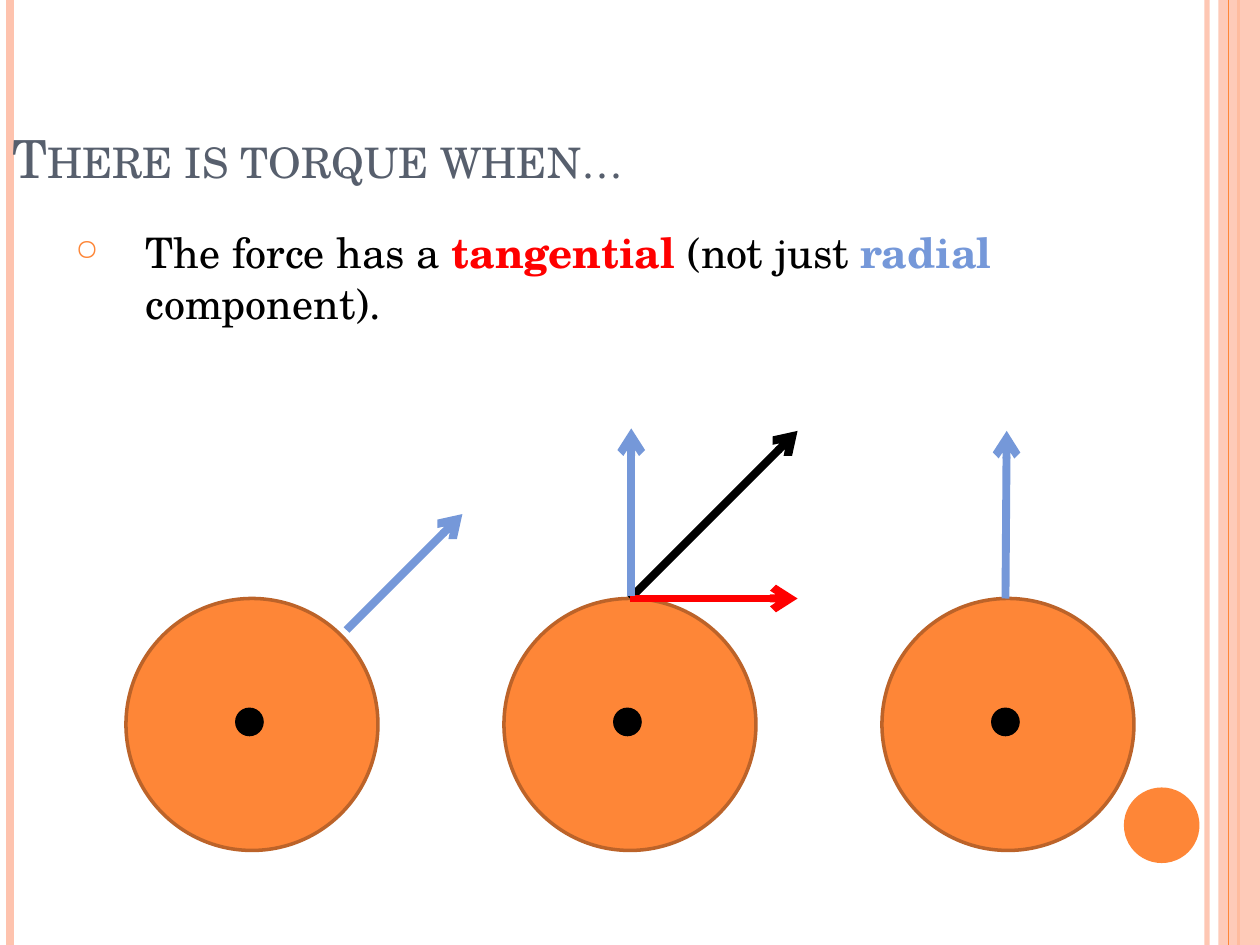
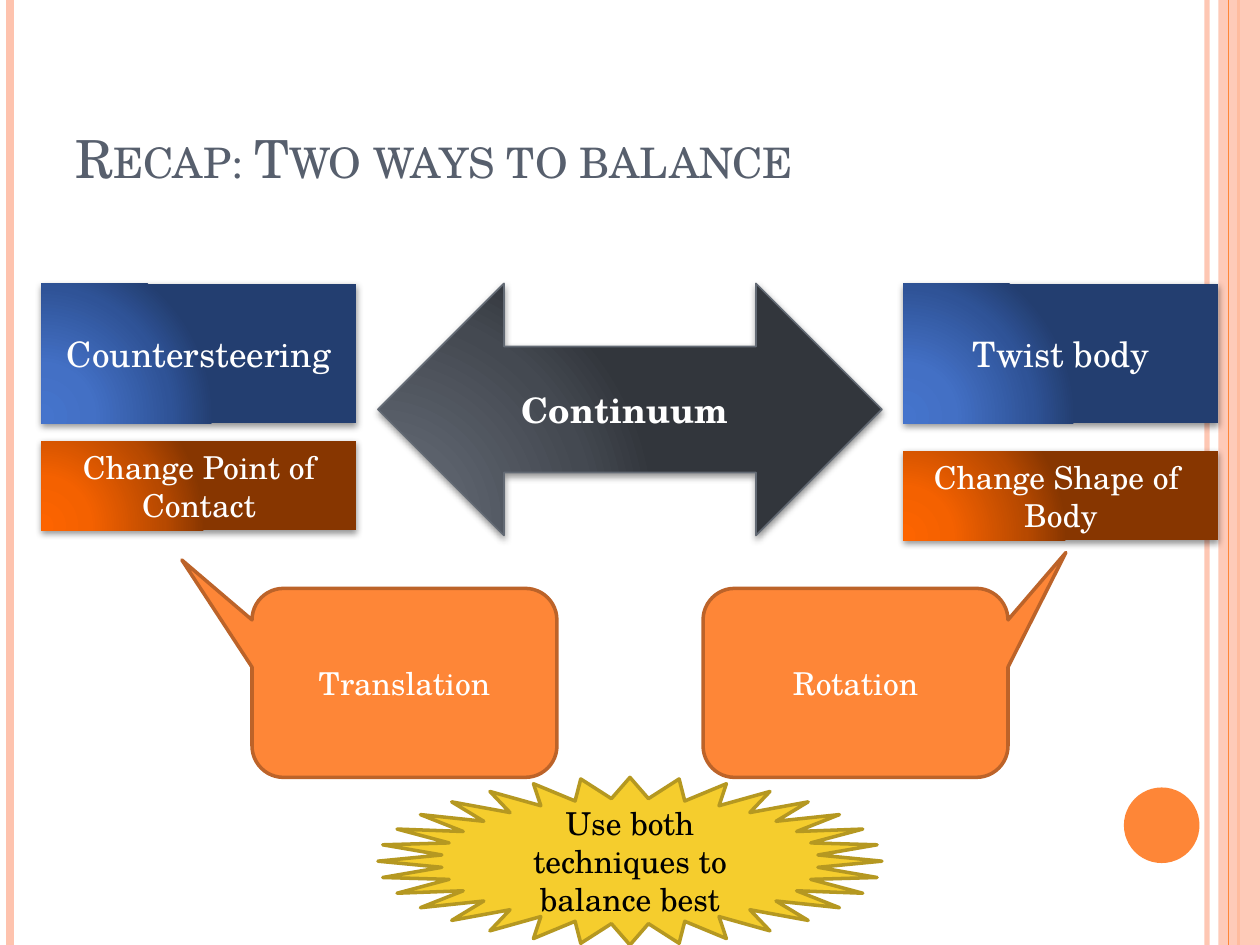
from lxml.etree import SubElement
from pptx import Presentation
from pptx.dml.color import RGBColor
from pptx.enum.shapes import MSO_CONNECTOR, MSO_SHAPE
from pptx.enum.text import MSO_ANCHOR, PP_ALIGN
from pptx.oxml.ns import qn
from pptx.util import Inches, Pt

FONT = "TeX Gyre Schola"
ORANGE = RGBColor(0xFE, 0x86, 0x37)
RUST = RGBColor(0xBC, 0x63, 0x29)
PEACH = RGBColor(0xFE, 0xC3, 0xAE)
SLATE = RGBColor(0x57, 0x5F, 0x6D)
STEEL = RGBColor(0x63, 0x6A, 0x74)
BLUE = RGBColor(0x75, 0x98, 0xD9)
RED = RGBColor(0xFF, 0, 0)
GOLD = RGBColor(0xF5, 0xCD, 0x2D)
OLIVE = RGBColor(0xB5, 0x98, 0x21)
BLACK = RGBColor(0, 0, 0)
WHITE = RGBColor(0xFF, 0xFF, 0xFF)

STOPS = (0, 30, 75, 100)
GRAY_FADE = ("5E656F", "5B616B", "444951", "32363C")
BLUE_FADE = ("4574CC", "4370C5", "2F5397", "233E70")
RUST_FADE = ("FD6400", "F46100", "B74900", "873600")


def node(parent, tag, **attrs):
    return SubElement(parent, qn(tag), {key: str(val) for key, val in attrs.items()})


def add_alpha(shape, percent):
    for color in shape.element.spPr.iter(qn("a:srgbClr")):
        node(color, "a:alpha", val=percent * 1000)


def style_run(run, size, color, bold=False):
    font = run.font
    font.name, font.size, font.bold = FONT, Pt(size), bold
    font.color.rgb = color


def add_shape(slide, kind, box, fill=None, line=None, width=2):
    shape = slide.shapes.add_shape(kind, *map(Inches, box))
    shape.shadow.inherit = False
    if fill is None:
        shape.fill.background()
    else:
        shape.fill.solid()
        shape.fill.fore_color.rgb = fill
    if line is None:
        shape.line.fill.background()
    else:
        shape.line.color.rgb = line
        shape.line.width = Pt(width)
    return shape


def add_label(shape, text, size, color=WHITE, bold=False):
    frame = shape.text_frame
    frame.word_wrap = True
    frame.vertical_anchor = MSO_ANCHOR.MIDDLE
    frame.text = text
    for para in frame.paragraphs:
        para.alignment = PP_ALIGN.CENTER
        for run in para.runs:
            style_run(run, size, color, bold)


def add_glow(shape, colors):
    props = shape.element.spPr
    blank = props.find(qn("a:noFill"))
    grad = node(props, "a:gradFill", rotWithShape=1)
    props.replace(blank, grad)
    stops = node(grad, "a:gsLst")
    for place, color in zip(STOPS, colors):
        stop = node(stops, "a:gs", pos=place * 1000)
        node(stop, "a:srgbClr", val=color)
    path = node(grad, "a:path", path="circle")
    node(path, "a:fillToRect", l=5000, t=100000, r=120000, b=10000)
    shade = node(props.find(qn("a:effectLst")), "a:outerShdw",
                 blurRad=Pt(4), dist=Pt(1.6), dir=5400000, rotWithShape=0)
    node(node(shade, "a:srgbClr", val=BLACK), "a:alpha", val=42000)


def add_line(slide, start, end, color, width, arrow=False):
    line = slide.shapes.add_connector(MSO_CONNECTOR.STRAIGHT, *map(Inches, start + end))
    line.line.color.rgb = color
    line.line.width = Pt(width)
    props = line.element.spPr
    if arrow:
        node(props.find(qn("a:ln")), "a:tailEnd", type="arrow")
    node(props, "a:effectLst")
    return line


def add_text(slide, box):
    frame = slide.shapes.add_textbox(*map(Inches, box)).text_frame
    frame.word_wrap = True
    return frame


def add_title(slide, text, left):
    frame = add_text(slide, (left, 0.3, 10 - 2 * left, 1.25))
    frame.vertical_anchor = MSO_ANCHOR.BOTTOM
    frame.text = text
    run = frame.paragraphs[0].runs[0]
    style_run(run, 30, SLATE)
    run.font._element.set("cap", "small")


def add_bullet(slide, parts):
    para = add_text(slide, (0.5, 1.75, 8.17, 5.33)).paragraphs[0]
    para.space_before = Pt(6)
    props = para._p.get_or_add_pPr()
    props.set("marL", str(Inches(0.56)))
    props.set("indent", str(-Inches(0.56)))
    node(node(props, "a:buClr"), "a:srgbClr", val=ORANGE)
    node(props, "a:buSzPct", val=70000)
    node(props, "a:buChar", char="○")
    for text, color, bold in parts:
        run = para.add_run()
        run.text = text
        style_run(run, 24, color, bold)


def add_frame(slide):
    def rule(x, color, width):
        return add_line(slide, (x, 0), (x, 7.5), color, width)

    add_alpha(rule(9.58, PEACH, 3), 93)
    rule(0.08, PEACH, 4.5)
    rule(9.83, ORANGE, 1.5)
    add_alpha(add_shape(slide, MSO_SHAPE.RECTANGLE, (9.67, 0, 0.33, 7.5), PEACH), 87)
    rule(9.75, ORANGE, 0.75)
    add_shape(slide, MSO_SHAPE.OVAL, (8.92, 6.25, 0.6, 0.6), ORANGE)


def add_slide(deck, title, left):
    slide = deck.slides.add_slide(deck.slide_layouts[6])
    add_frame(slide)
    add_title(slide, title, left)
    return slide


def add_wheel(slide, left):
    add_shape(slide, MSO_SHAPE.OVAL, (left, 4.75, 2, 2), ORANGE, RUST)
    add_shape(slide, MSO_SHAPE.OVAL, (left + 0.88, 5.63, 0.2, 0.2), BLACK, BLACK)


def add_panel(slide, box, text, size, colors):
    panel = add_shape(slide, MSO_SHAPE.RECTANGLE, box)
    add_glow(panel, colors)
    add_label(panel, text, size)


def add_callout(slide, left, text, tip):
    shape = add_shape(slide, MSO_SHAPE.ROUNDED_RECTANGULAR_CALLOUT,
                      (left, 4.67, 2.42, 1.5), ORANGE, RUST)
    shape.adjustments[0], shape.adjustments[1] = tip
    add_label(shape, text, 18)


def build_torque(deck):
    slide = add_slide(deck, "There is torque when…", 0)
    add_bullet(slide, (
        ("The force has a ", BLACK, False),
        ("tangential", RED, True),
        (" (not just ", BLACK, False),
        ("radial ", BLUE, True),
        ("component).", BLACK, False),
    ))
    for left in (1, 4, 7):
        add_wheel(slide, left)
    for start, end, color in (
        ((5, 4.75), (6.33, 3.42), BLACK),
        ((5, 4.75), (6.33, 4.75), RED),
        ((5.01, 4.73), (5.01, 3.4), BLUE),
        ((2.75, 5), (3.67, 4.08), BLUE),
        ((7.98, 4.75), (7.99, 3.42), BLUE),
    ):
        add_line(slide, start, end, color, 4.5, arrow=True)


def build_recap(deck):
    slide = add_slide(deck, "Recap: Two ways to balance", 0.5)
    arrow = add_shape(slide, MSO_SHAPE.LEFT_RIGHT_ARROW, (3, 2.25, 4, 2),
                      line=STEEL, width=1)
    add_glow(arrow, GRAY_FADE)
    add_label(arrow, "Continuum ", 20, bold=True)
    for left, top, method, change in (
        (0.33, 3.5, "Countersteering", "Change Point of Contact"),
        (7.17, 3.58, "Twist body", "Change Shape of \nBody"),
    ):
        add_panel(slide, (left, 2.25, 2.5, 1.11), method, 20, BLUE_FADE)
        add_panel(slide, (left, top, 2.5, 0.71), change, 18, RUST_FADE)
    add_callout(slide, 2, "Translation", (-0.73, -0.65))
    add_callout(slide, 5.58, "Rotation", (0.69, -0.69))
    star = add_shape(slide, MSO_SHAPE.STAR_32_POINT, (3, 6.17, 4, 1.33), GOLD, OLIVE)
    add_label(star, "Use both techniques to balance best", 18, BLACK)


def main():
    deck = Presentation()
    deck.slide_width, deck.slide_height = Inches(10), Inches(7.5)
    build_torque(deck)
    build_recap(deck)
    deck.save("out.pptx")


if __name__ == "__main__":
    main()
